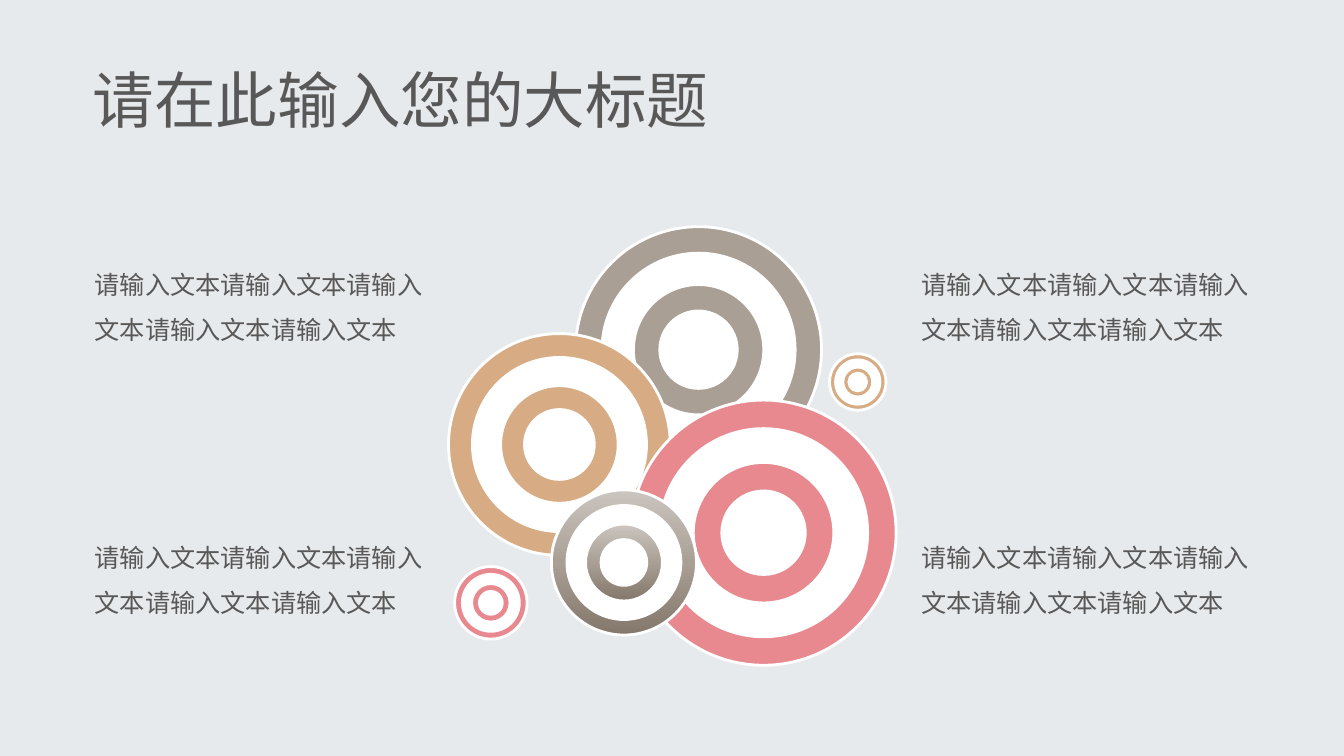
from copy import deepcopy

from pptx import Presentation
from pptx.dml.color import RGBColor
from pptx.enum.shapes import MSO_SHAPE
from pptx.enum.text import MSO_ANCHOR as Anchor, PP_ALIGN as Align
from pptx.oxml.ns import qn
from pptx.oxml.xmlchemy import OxmlElement
from pptx.util import Pt

COLORS = {
    "background": "E7EAED",
    "text": "585858",
    "white": "FFFFFF",
    "grey": "A99F95",
    "tan": "D7AB83",
    "pink": "E8888F",
    "dark taupe": "84776B",
    "light taupe": "CBC5BF",
}
FONT = "Noto Sans CJK SC"
TAUPE_GRADIENT = ("dark taupe", "grey", "light taupe")
RING_RATIOS = (1, 0.785, 0.53, 0.315)
TARGETS = (
    (499, 249.8, 175.7, ("grey",)),
    (350.6, 430.6, 51.8, ("pink",)),
    (399.6, 317.5, 158.4, ("tan",)),
    (545.4, 380.5, 189.4, ("pink",)),
    (445.7, 401.8, 103.7, TAUPE_GRADIENT),
    (612.7, 272.9, 40.3, ("tan",)),
)
CAPTION = "请输入文本" * 5


def rgb(name):
    return RGBColor.from_string(COLORS[name])


def write(frame, text, size, spacing, anchor):
    frame.word_wrap = True
    frame.vertical_anchor = anchor
    frame.text = text
    paragraph = frame.paragraphs[0]
    paragraph.alignment = Align.LEFT
    paragraph.line_spacing = spacing
    paragraph.font.size = Pt(size)
    paragraph.font.color.rgb = rgb("text")
    paragraph.font.name = FONT
    east_asian = OxmlElement("a:ea")
    east_asian.set("typeface", FONT)
    latin = next(paragraph._p.iter(qn("a:latin")))
    latin.addnext(east_asian)


def add_title(slide, text):
    title = slide.shapes.title
    title.left, title.top, title.width, title.height = Pt(59), Pt(13), Pt(841), Pt(88)
    write(title.text_frame, text, 44, 0.9, Anchor.BOTTOM)


def add_caption(slide, left, top):
    caption = slide.shapes.add_textbox(Pt(left), Pt(top), Pt(255.6), Pt(82))
    write(caption.text_frame, CAPTION, 18, 1.5, Anchor.MIDDLE)


def fill_gradient(disc, colors):
    disc.fill.gradient()
    disc.fill.gradient_angle = 90
    first = next(disc._element.iter(qn("a:gs")))
    first.addnext(deepcopy(first))
    for index, (stop, color) in enumerate(zip(disc.fill.gradient_stops, colors)):
        stop.position = index / (len(colors) - 1)
        stop.color.rgb = rgb(color)


def add_disc(slide, x, y, diameter, colors):
    corner = Pt(x - diameter / 2), Pt(y - diameter / 2)
    disc = slide.shapes.add_shape(MSO_SHAPE.OVAL, *corner, Pt(diameter), Pt(diameter))
    disc.shadow.inherit = False
    disc.line.color.rgb = rgb("white")
    disc.line.width = Pt(2)
    if len(colors) > 1:
        fill_gradient(disc, colors)
    else:
        disc.fill.solid()
        disc.fill.fore_color.rgb = rgb(colors[0])


def add_target(slide, x, y, diameter, colors):
    for index, ratio in enumerate(RING_RATIOS):
        add_disc(slide, x, y, diameter * ratio, ("white",) if index % 2 else colors)


def main():
    deck = Presentation()
    deck.slide_width, deck.slide_height = Pt(960), Pt(540)
    slide = deck.slides.add_slide(deck.slide_layouts[5])
    slide.background.fill.solid()
    slide.background.fill.fore_color.rgb = rgb("background")
    add_title(slide, "请在此输入您的大标题")
    for target in TARGETS:
        add_target(slide, *target)
    for left in (60.5, 651):
        for top in (368, 173):
            add_caption(slide, left, top)
    deck.save("out.pptx")


if __name__ == "__main__":
    main()
